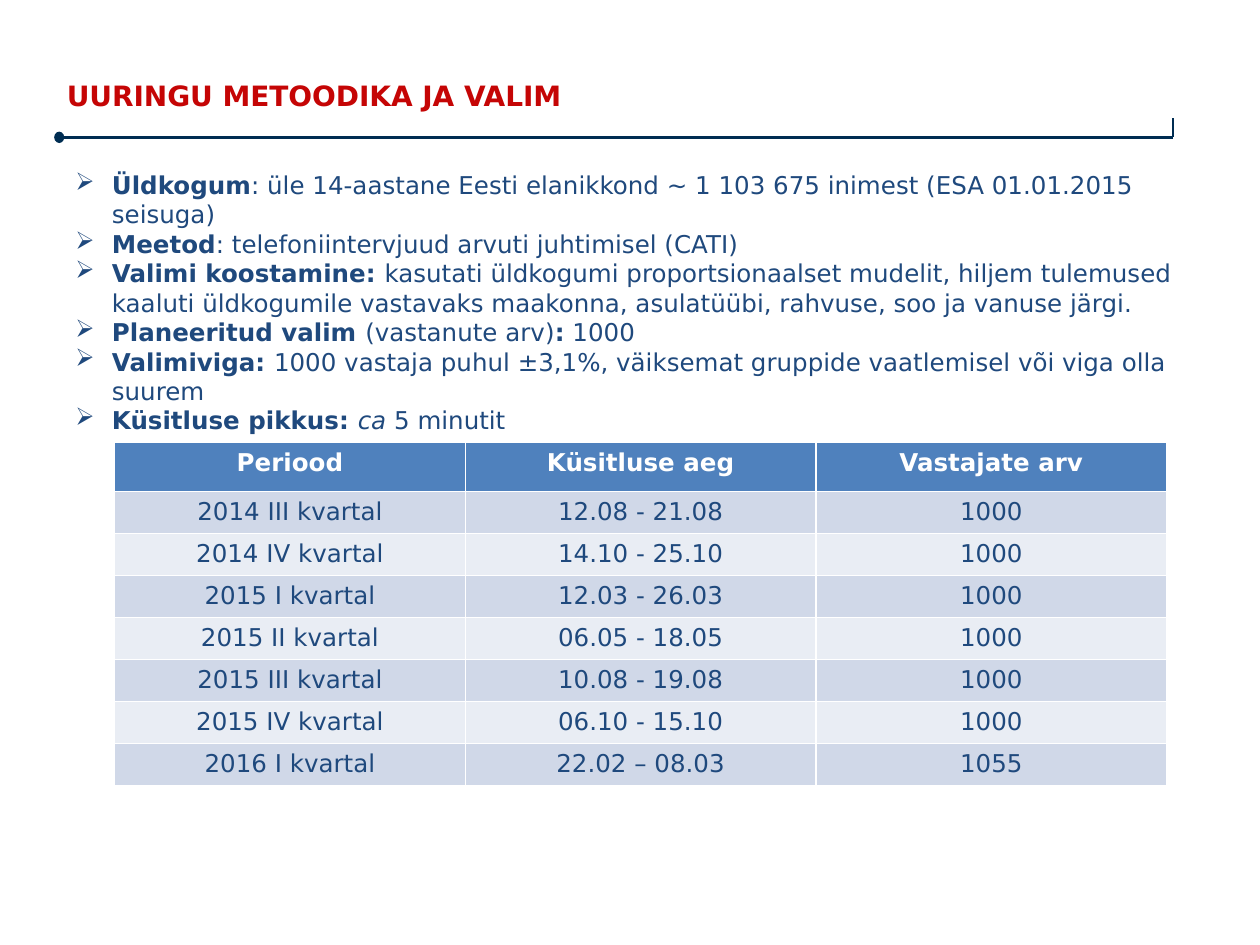
from lxml import etree
from pptx import Presentation
from pptx.dml.color import RGBColor
from pptx.enum import shapes, text
from pptx.oxml.ns import qn
from pptx.util import Inches, Pt

FONT = "DejaVu Sans"
RED = RGBColor(0xC5, 0x05, 0x05)
NAVY = RGBColor(0x00, 0x2D, 0x52)
BLUE = RGBColor(0x1F, 0x49, 0x7D)
WHITE = RGBColor(0xFF, 0xFF, 0xFF)
HEADER_FILL = RGBColor(0x4F, 0x81, 0xBD)
BAND_FILLS = (RGBColor(0xD0, 0xD8, 0xE8), RGBColor(0xE9, 0xED, 0xF4))

# Each bullet is a list of (text, style) runs; style is "b", "i" or "".
BULLETS = [
    [("Üldkogum", "b"),
     (": üle 14-aastane Eesti elanikkond ~ 1 103 675 inimest (ESA 01.01.2015 seisuga)", "")],
    [("Meetod", "b"), (": telefoniintervjuud arvuti juhtimisel (CATI)", "")],
    [("Valimi koostamine: ", "b"),
     ("kasutati üldkogumi proportsionaalset mudelit, hiljem tulemused kaaluti "
      "üldkogumile vastavaks maakonna, asulatüübi, rahvuse, soo ja vanuse järgi.", "")],
    [("Planeeritud valim ", "b"), ("(vastanute arv)", ""), (":", "b"), (" 1000", "")],
    [("Valimiviga: ", "b"),
     ("1000 vastaja puhul ±3,1%, väiksemat gruppide vaatlemisel või viga olla suurem", "")],
    [("Küsitluse pikkus: ", "b"), ("ca", "i"), (" 5 minutit", "")],
]

SURVEYS = [
    ("Periood", "Küsitluse aeg", "Vastajate arv"),
    ("2014 III kvartal", "12.08 - 21.08", "1000"),
    ("2014 IV kvartal", "14.10 - 25.10", "1000"),
    ("2015 I kvartal", "12.03 - 26.03", "1000"),
    ("2015 II kvartal", "06.05 - 18.05", "1000"),
    ("2015 III kvartal", "10.08 - 19.08", "1000"),
    ("2015 IV kvartal", "06.10 - 15.10", "1000"),
    ("2016 I kvartal", "22.02 – 08.03", "1055"),
]


def format_font(font, size, color, bold=None):
    font.name = FONT
    font.size = Pt(size)
    font.color.rgb = color
    font.bold = bold


def place_title(slide, left, top, width, height):
    title = slide.shapes.title
    title.left, title.top, title.width, title.height = left, top, width, height
    frame = title.text_frame
    frame.text = "UURINGU METOODIKA JA VALIM"
    frame.vertical_anchor = text.MSO_ANCHOR.MIDDLE
    paragraph = frame.paragraphs[0]
    paragraph.alignment = text.PP_ALIGN.LEFT
    format_font(paragraph.font, 16, RED, True)


def add_title_rule(slide, left, top, width, height):
    """Line along the bottom of the box, with a dot at its left and a tick up its right side."""
    right, bottom = left + width, top + height
    for start_x, start_y in ((right, top), (left, bottom)):
        line = slide.shapes.add_connector(
            shapes.MSO_CONNECTOR.STRAIGHT, start_x, start_y, right, bottom)
        line.line.color.rgb = NAVY
        line.line.width = Pt(1.5)
        etree.SubElement(line._element.spPr, qn("a:effectLst"))

    dot_width, dot_height = Inches(0.08), Inches(0.09)
    dot = slide.shapes.add_shape(
        shapes.MSO_SHAPE.OVAL, left - dot_width // 2, bottom - dot_height // 2,
        dot_width, dot_height)
    dot.shadow.inherit = False
    dot.fill.solid()
    dot.fill.fore_color.rgb = NAVY
    dot.line.fill.background()


def set_bullet(paragraph, character, indent):
    properties = paragraph._p.get_or_add_pPr()
    properties.set("marL", str(indent))
    properties.set("indent", str(-indent))
    etree.SubElement(properties, qn("a:buChar")).set("char", character)


def add_methodology(slide, left, top, width, height):
    frame = slide.shapes.add_textbox(left, top, width, height).text_frame
    frame.word_wrap = True
    for index, runs in enumerate(BULLETS):
        paragraph = frame.add_paragraph() if index else frame.paragraphs[0]
        set_bullet(paragraph, "➢", Inches(0.29))
        format_font(paragraph.font, 14, BLUE)
        for words, style in runs:
            run = paragraph.add_run()
            run.text = words
            run.font.bold = style == "b"
            run.font.italic = style == "i"


def add_survey_table(slide, left, top, width, header_height, row_height):
    row_count, column_count = len(SURVEYS), len(SURVEYS[0])
    height = header_height + row_height * (row_count - 1)
    table = slide.shapes.add_table(
        row_count, column_count, left, top, width, height).table
    for row_index, values in enumerate(SURVEYS):
        is_header = row_index == 0
        table.rows[row_index].height = header_height if is_header else row_height
        for column_index, value in enumerate(values):
            cell = table.cell(row_index, column_index)
            cell.text = value
            cell.fill.solid()
            cell.fill.fore_color.rgb = (
                HEADER_FILL if is_header else BAND_FILLS[(row_index - 1) % 2])
            paragraph = cell.text_frame.paragraphs[0]
            paragraph.alignment = text.PP_ALIGN.CENTER
            format_font(paragraph.font, 14, WHITE if is_header else BLUE, is_header)


def main():
    presentation = Presentation()
    presentation.slide_width = Inches(10)
    presentation.slide_height = Inches(7.5)
    slide = presentation.slides.add_slide(presentation.slide_layouts[5])
    add_title_rule(slide, Inches(0.47), Inches(0.94), Inches(8.84), Inches(0.15))
    place_title(slide, Inches(0.43), Inches(0.44), Inches(8.4), Inches(0.63))
    add_methodology(slide, Inches(0.5), Inches(1.3), Inches(9.07), Inches(5.32))
    add_survey_table(slide, Inches(0.91), Inches(3.51), Inches(8.35),
                     Inches(0.39), Inches(0.33))
    presentation.save("out.pptx")


if __name__ == "__main__":
    main()
